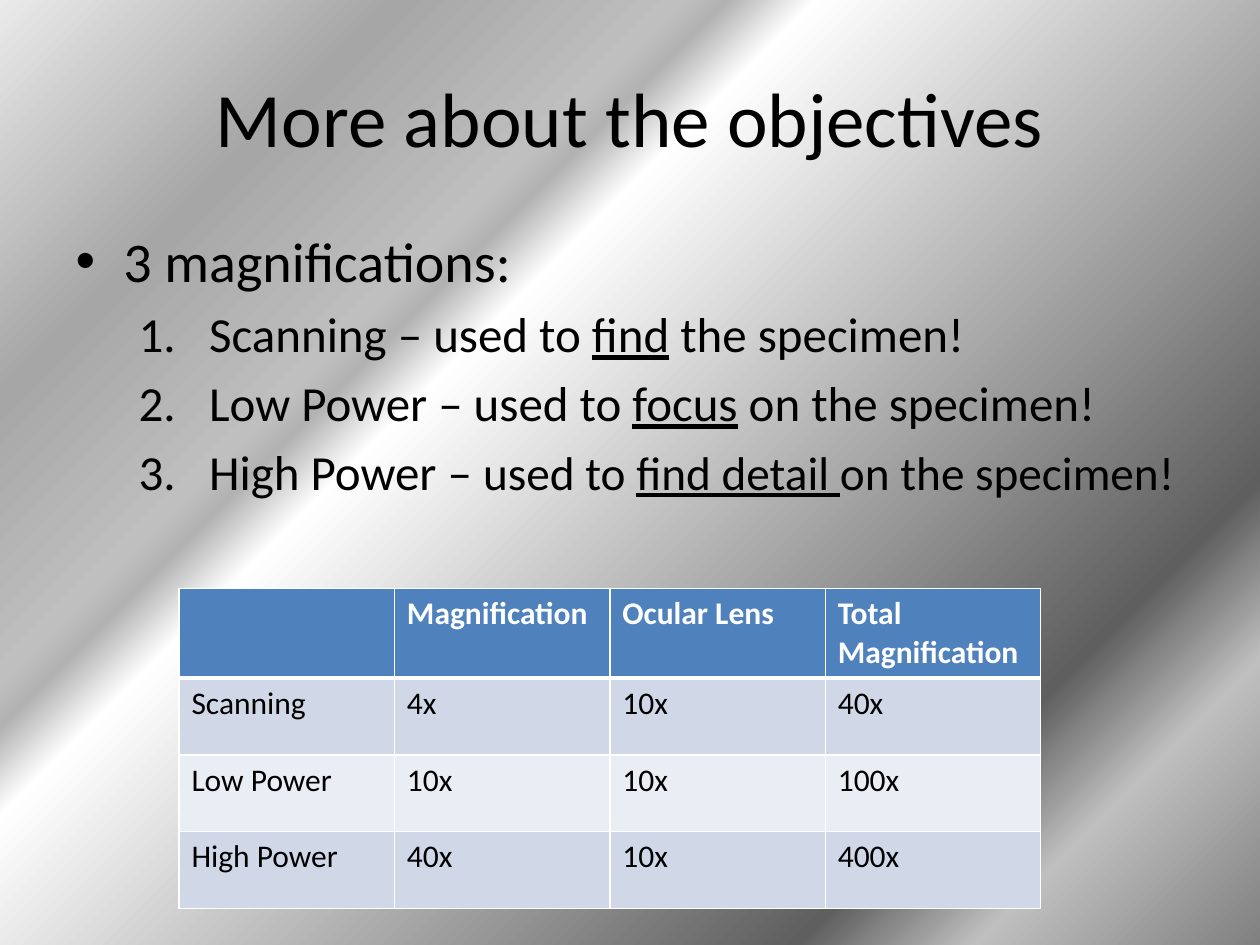
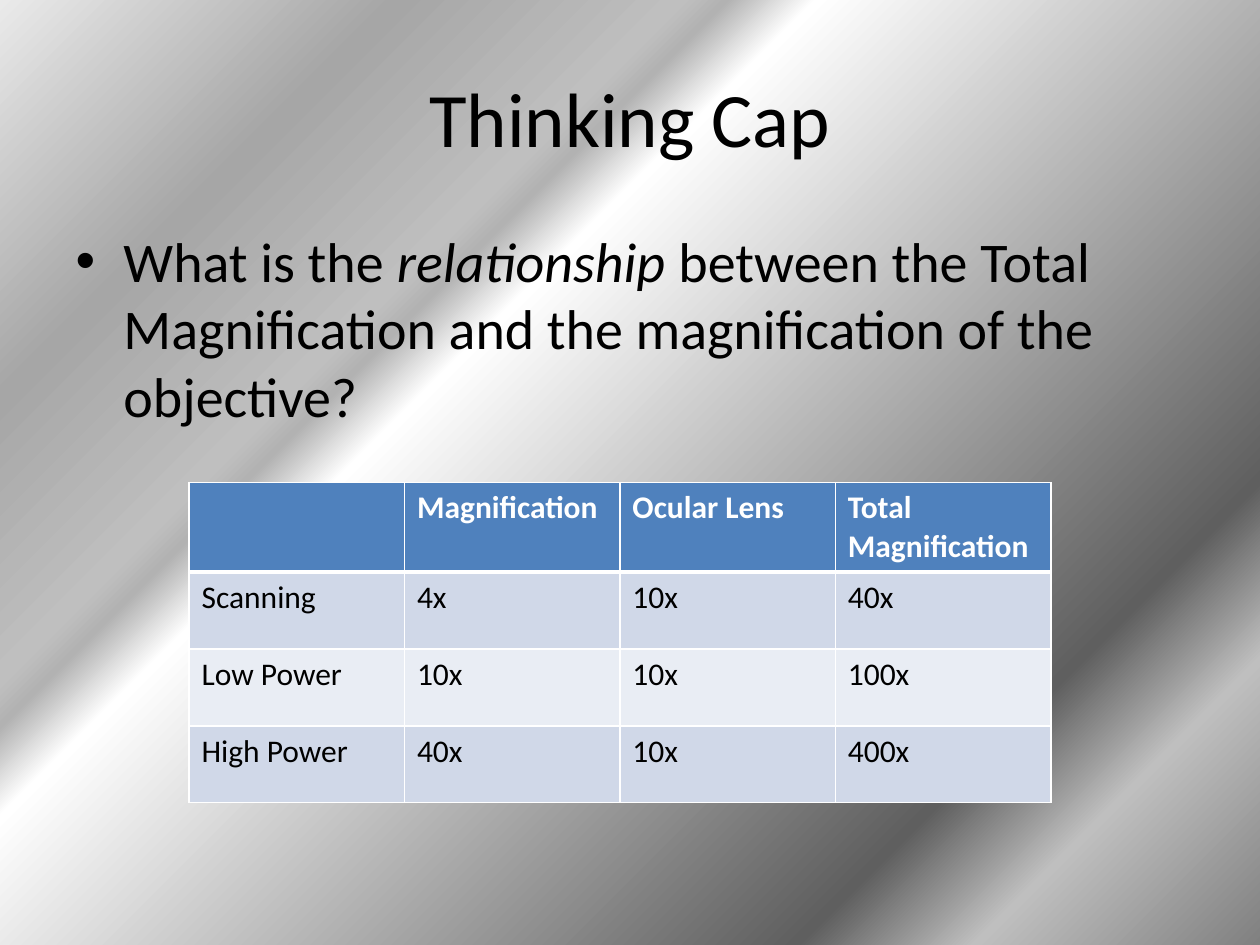
from dataclasses import dataclass

from lxml.etree import SubElement
from pptx import Presentation
from pptx.dml.color import RGBColor
from pptx.enum.text import MSO_ANCHOR, PP_ALIGN
from pptx.oxml import parse_xml
from pptx.oxml.ns import nsdecls, qn
from pptx.util import Emu, Inches, Pt

FONT = "Calibri"
COLORS = {
    "text": "000000",
    "header": "4F81BD",
    "header_text": "FFFFFF",
    "odd_row": "D0D8E8",
    "even_row": "E9EDF4",
    "border": "FFFFFF",
}
BACKGROUND_STOPS = {
    0: "808080", 13: "BFBFBF", 21: "5F5F5F", 63: "FFFFFF",
    67: "B2B2B2", 69: "BFBFBF", 82: "A6A6A6", 100: "EAEAEA",
}
SLIDE_WIDTH, SLIDE_HEIGHT = Inches(10), Inches(7.5)
MARGIN = 0.05  # share of the slide's width
TITLE_BAND = (0.04, 0.1667)  # top and height, shares of the slide's height
BODY_BAND = (0.2333, 0.66)
COLUMN_WIDTH, ROW_HEIGHT = Inches(1.71), Inches(0.61)

MAGNIFICATIONS = (
    ("", "Magnification", "Ocular Lens", "Total Magnification"),
    ("Scanning", "4x", "10x", "40x"),
    ("Low Power", "10x", "10x", "100x"),
    ("High Power", "40x", "10x", "400x"),
)


@dataclass(frozen=True)
class Span:
    text: str
    size: float = 32
    italic: bool = False
    underline: bool = False


@dataclass(frozen=True)
class Item:
    spans: tuple[Span, ...]
    numbered: bool = False


@dataclass(frozen=True)
class Page:
    title: str
    items: tuple[Item, ...]
    table_left: float  # share of the slide's width
    table_top: float  # share of the slide's height


def numbered_item(before: str, stressed: str, after: str, lead: str = "", size: float = 28) -> Item:
    """A numbered line with one underlined part; lead keeps the full size."""
    spans = (Span(lead, 28),) if lead else ()
    return Item(
        spans + (Span(before, size), Span(stressed, size, underline=True), Span(after, size)),
        numbered=True,
    )


PAGES = (
    Page(
        "More about the objectives",
        (
            Item((Span("3 magnifications:"),)),
            numbered_item("Scanning – used to ", "find", " the specimen!"),
            numbered_item("Low Power – used to ", "focus", " on the specimen!"),
            numbered_item("used to ", "find detail ", "on the specimen!", lead="High Power – ", size=27),
        ),
        table_left=0.142,
        table_top=0.6227,
    ),
    Page(
        "Thinking Cap",
        (
            Item((
                Span("What is the "),
                Span("relationship", italic=True),
                Span(" between the Total Magnification and the magnification of the objective?"),
            )),
        ),
        table_left=0.15,
        table_top=0.5107,
    ),
)


def add_text(paragraph, text: str, *, size: float, color: str = "text", bold: bool = False,
             italic: bool = False, underline: bool = False) -> None:
    run = paragraph.add_run()
    run.text = text
    font = run.font
    font.name, font.size = FONT, Pt(size)
    font.bold, font.italic, font.underline = bold, italic, underline
    font.color.rgb = RGBColor.from_string(COLORS[color])


def set_background(master) -> None:
    """Give every slide a gradient that spreads from the bottom right corner."""
    master.background.fill.solid()
    solid = master.element.find(".//" + qn("p:bgPr")).find(qn("a:solidFill"))
    stops = "".join(
        f'<a:gs pos="{position * 1000}"><a:srgbClr val="{color}"/></a:gs>'
        for position, color in BACKGROUND_STOPS.items()
    )
    gradient = parse_xml(
        f'<a:gradFill {nsdecls("a")} rotWithShape="1"><a:gsLst>{stops}</a:gsLst>'
        '<a:path path="circle"><a:fillToRect l="100000" t="100000"/></a:path></a:gradFill>'
    )
    solid.getparent().replace(solid, gradient)


def place(shape, band: tuple[float, float]) -> None:
    top, height = band
    shape.left, shape.width = Emu(int(SLIDE_WIDTH * MARGIN)), Emu(int(SLIDE_WIDTH * (1 - 2 * MARGIN)))
    shape.top, shape.height = Emu(int(SLIDE_HEIGHT * top)), Emu(int(SLIDE_HEIGHT * height))


def set_marker(paragraph, numbered: bool) -> None:
    margin, hanging = (1.06, 0.56) if numbered else (0.38, 0.38)
    paragraph.level = int(numbered)
    properties = paragraph._p.get_or_add_pPr()
    properties.set("marL", str(Inches(margin)))
    properties.set("indent", str(-Inches(hanging)))
    if numbered:
        SubElement(properties, qn("a:buFont"), typeface="+mj-lt")
        SubElement(properties, qn("a:buAutoNum"), type="arabicPeriod")
    else:
        SubElement(properties, qn("a:buChar"), char="•")


def fill_title(shape, title: str) -> None:
    place(shape, TITLE_BAND)
    shape.text_frame.vertical_anchor = MSO_ANCHOR.MIDDLE
    paragraph = shape.text_frame.paragraphs[0]
    paragraph.alignment = PP_ALIGN.CENTER
    add_text(paragraph, title, size=44)


def fill_body(shape, items: tuple[Item, ...]) -> None:
    place(shape, BODY_BAND)
    frame = shape.text_frame
    for index, item in enumerate(items):
        paragraph = frame.add_paragraph() if index else frame.paragraphs[0]
        set_marker(paragraph, item.numbered)
        for span in item.spans:
            add_text(paragraph, span.text, size=span.size, italic=span.italic, underline=span.underline)


def set_borders(cell, top: float, bottom: float) -> None:
    properties = cell._tc.get_or_add_tcPr()
    widths = {"lnL": 1, "lnR": 1, "lnT": top, "lnB": bottom}
    for index, (side, width) in enumerate(widths.items()):
        properties.insert(index, parse_xml(
            f'<a:{side} {nsdecls("a")} w="{Pt(width)}"><a:solidFill>'
            f'<a:srgbClr val="{COLORS["border"]}"/></a:solidFill></a:{side}>'
        ))


def add_magnification_table(slide, left: float, top: float) -> None:
    row_count, column_count = len(MAGNIFICATIONS), len(MAGNIFICATIONS[0])
    table = slide.shapes.add_table(
        row_count, column_count,
        Emu(int(SLIDE_WIDTH * left)), Emu(int(SLIDE_HEIGHT * top)),
        COLUMN_WIDTH * column_count, ROW_HEIGHT * row_count,
    ).table
    for row, values in enumerate(MAGNIFICATIONS):
        is_header = row == 0
        fill = "header" if is_header else ("even_row", "odd_row")[row % 2]
        for column, value in enumerate(values):
            cell = table.cell(row, column)
            cell.fill.solid()
            cell.fill.fore_color.rgb = RGBColor.from_string(COLORS[fill])
            set_borders(cell, top=3 if row == 1 else 1, bottom=3 if is_header else 1)
            if value:
                add_text(cell.text_frame.paragraphs[0], value, size=18, bold=is_header,
                         color="header_text" if is_header else "text")


def main() -> None:
    presentation = Presentation()
    presentation.slide_width, presentation.slide_height = SLIDE_WIDTH, SLIDE_HEIGHT
    set_background(presentation.slide_master)
    for page in PAGES:
        slide = presentation.slides.add_slide(presentation.slide_layouts[1])
        fill_title(slide.shapes.title, page.title)
        fill_body(slide.placeholders[1], page.items)
        add_magnification_table(slide, page.table_left, page.table_top)
    presentation.save("out.pptx")


if __name__ == "__main__":
    main()
